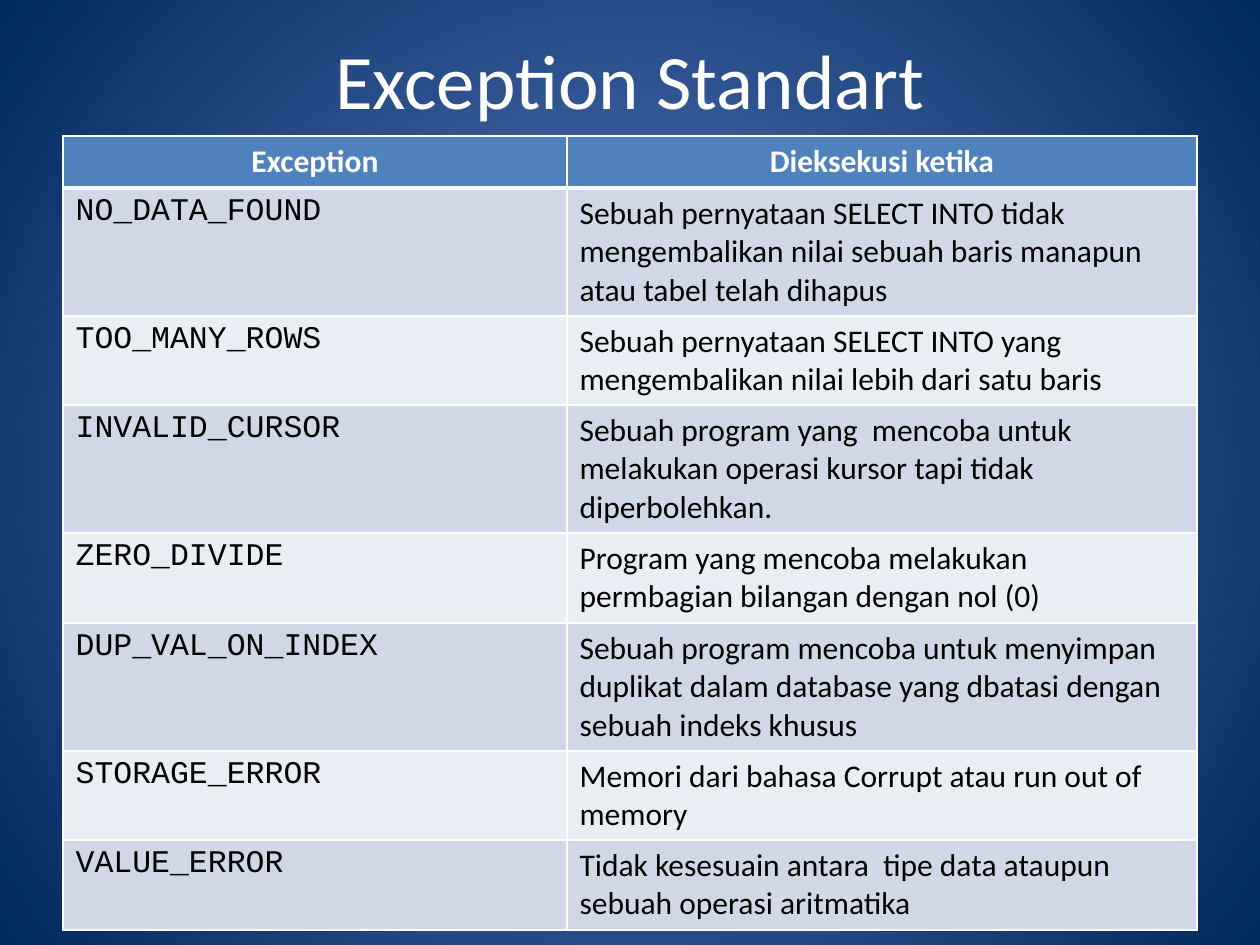
from lxml import etree
from pptx import Presentation
from pptx.dml.color import RGBColor
from pptx.enum.text import MSO_ANCHOR, PP_ALIGN
from pptx.oxml.ns import qn
from pptx.util import Emu, Pt

MIDDLE = MSO_ANCHOR.MIDDLE
LEFT, CENTER = PP_ALIGN.LEFT, PP_ALIGN.CENTER

TITLE = "Exception Standart"
HEADER = ("Exception", "Dieksekusi ketika")
EXCEPTIONS = [
    ("NO_DATA_FOUND", "Sebuah pernyataan SELECT INTO tidak mengembalikan nilai sebuah baris manapun atau tabel telah dihapus"),
    ("TOO_MANY_ROWS", "Sebuah pernyataan SELECT INTO yang mengembalikan nilai lebih dari satu baris"),
    ("INVALID_CURSOR", "Sebuah program yang  mencoba untuk melakukan operasi kursor tapi tidak diperbolehkan."),
    ("ZERO_DIVIDE", "Program yang mencoba melakukan permbagian bilangan dengan nol (0)"),
    ("DUP_VAL_ON_INDEX", "Sebuah program mencoba untuk menyimpan duplikat dalam database yang dbatasi dengan sebuah indeks khusus"),
    ("STORAGE_ERROR", "Memori dari bahasa Corrupt atau run out of memory"),
    ("VALUE_ERROR", "Tidak kesesuain antara  tipe data ataupun sebuah operasi aritmatika"),
]
BODY_FONTS = ("Courier New", "Calibri")
BANDS = ("E9EDF4", "D0D8E8")
HEADER_FILL = "4F81BD"
WHITE, BLACK = "FFFFFF", "000000"
BACKGROUND = ("5E7CC5", "00295C")

SLIDE_W, SLIDE_H = 1260, 945
MARGIN = 63
TITLE_H = 158
TABLE_TOP = 136
COLUMNS = (504, 630)
ROW_HEIGHTS = (52, 128, 89, 128, 90, 128, 89, 90)


def px(n):
    return Emu(n * 914400 // 126)


def rgb(value):
    return RGBColor.from_string(value)


def write(tf, text, font, size, color, align=LEFT, bold=False):
    p = tf.paragraphs[0]
    p.text = text
    p.alignment = align
    p.font.name = font
    p.font.size = Pt(size)
    p.font.bold = bold
    p.font.color.rgb = rgb(color)


def set_background(slide):
    fill = slide.background.fill
    fill.gradient()
    for stop, color, position in zip(fill.gradient_stops, BACKGROUND, (0, 1)):
        stop.color.rgb = rgb(color)
        stop.position = position
    grad = next(slide._element.iter(qn("a:gradFill")))
    grad.remove(grad.find(qn("a:lin")))
    path = etree.SubElement(grad, qn("a:path"), path="circle")
    etree.SubElement(path, qn("a:fillToRect"), l="50000", t="50000", r="50000", b="50000")


def set_borders(cell, top, bottom):
    tcPr = cell._tc.get_or_add_tcPr()
    for side, width in (("L", 1), ("R", 1), ("T", top), ("B", bottom)):
        ln = etree.SubElement(tcPr, qn(f"a:ln{side}"), w=str(Pt(width)))
        fill = etree.SubElement(ln, qn("a:solidFill"))
        etree.SubElement(fill, qn("a:srgbClr"), val=WHITE)


def add_title(slide):
    s = slide.shapes.add_textbox(px(MARGIN), 0, px(SLIDE_W - 2 * MARGIN), px(TITLE_H))
    tf = s.text_frame
    tf.word_wrap = True
    tf.vertical_anchor = MIDDLE
    write(tf, TITLE, "Calibri", 44, WHITE, CENTER)


def add_exception_table(slide):
    rows = [HEADER] + EXCEPTIONS
    table = slide.shapes.add_table(
        len(rows), len(COLUMNS), px(MARGIN), px(TABLE_TOP),
        px(sum(COLUMNS)), px(sum(ROW_HEIGHTS))).table
    for column, width in zip(table.columns, COLUMNS):
        column.width = px(width)
    for i, (row, height) in enumerate(zip(rows, ROW_HEIGHTS)):
        table.rows[i].height = px(height)
        for j, text in enumerate(row):
            cell = table.cell(i, j)
            set_borders(cell, 3 if i == 1 else 1, 3 if i == 0 else 1)
            cell.fill.solid()
            cell.fill.fore_color.rgb = rgb(BANDS[i % 2] if i else HEADER_FILL)
            if i:
                write(cell.text_frame, text, BODY_FONTS[j], 18, BLACK)
            else:
                write(cell.text_frame, text, "Calibri", 18, WHITE, CENTER, True)


def main():
    prs = Presentation()
    prs.slide_width, prs.slide_height = px(SLIDE_W), px(SLIDE_H)
    slide = prs.slides.add_slide(prs.slide_layouts[6])
    set_background(slide)
    add_title(slide)
    add_exception_table(slide)
    prs.save("out.pptx")


if __name__ == "__main__":
    main()
